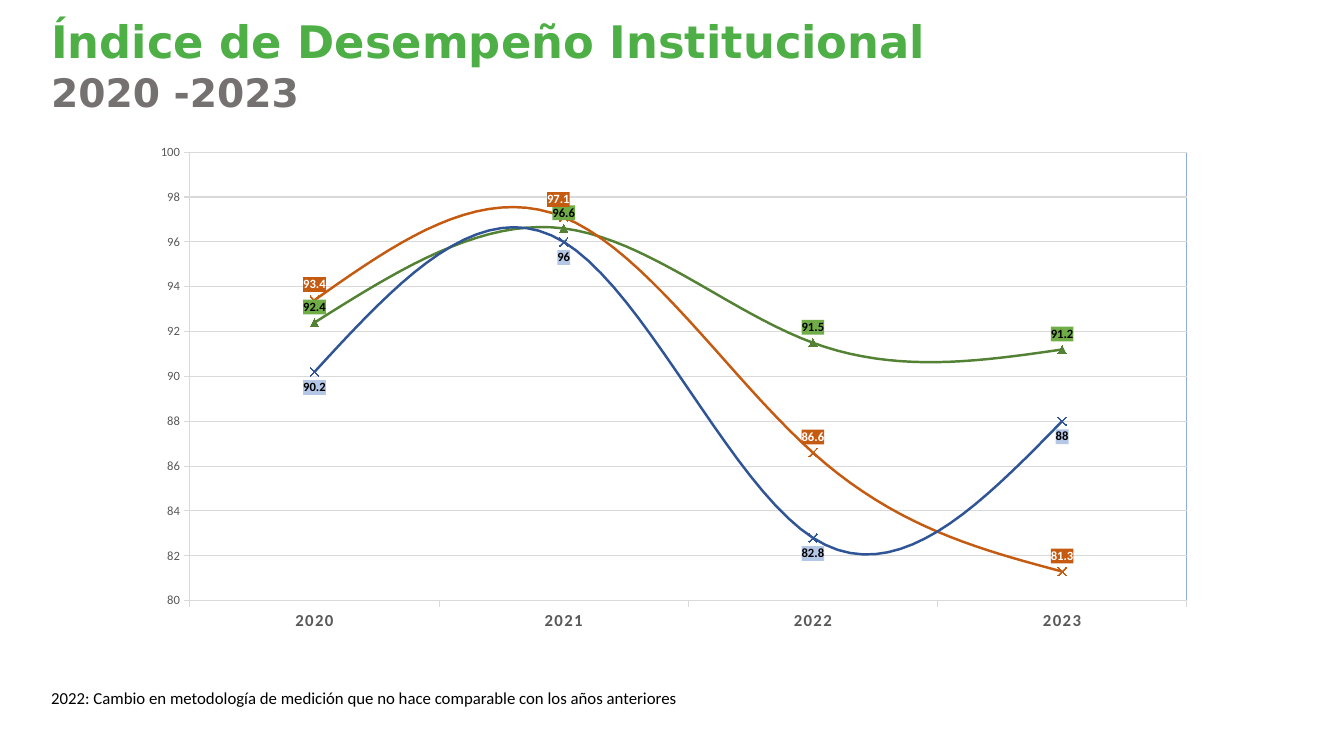
import pptx
import pptx.chart.data
import pptx.dml.color
import pptx.enum.chart
import pptx.enum.text
import pptx.oxml
import pptx.oxml.ns
import pptx.util

Cm = pptx.util.Cm
Pt = pptx.util.Pt
XL = pptx.enum.chart
NAMESPACES = pptx.oxml.ns.nsdecls("c", "a")

COLORS = {
    "title": "4DAF46", "period": "767171", "black": "000000", "white": "FFFFFF",
    "axis_text": "595959", "grid": "D9D9D9", "axis": "A6A6A6", "frame": "8FAADC",
    "green": "548235", "orange": "C55A11", "blue": "2F5597",
    "green_label": "70AD47", "blue_label": "B4C7E7",
}


def set_font(font, size, color, bold=False, name="Calibri"):
    font.name = name
    font.size = Pt(size)
    font.bold = bold
    font.color.rgb = pptx.dml.color.RGBColor.from_string(COLORS[color])


def chart_xml(tag, content):
    return pptx.oxml.parse_xml(f"<c:{tag} {NAMESPACES}>{content}</c:{tag}>")


deck = pptx.Presentation()
deck.slide_width = Cm(33.87)
deck.slide_height = Cm(19.05)
page = deck.slides.add_slide(deck.slide_layouts[6])

title_box = page.shapes.add_textbox(Cm(1.04), Cm(0.23), Cm(27.2), Cm(2.82))
title_box.text_frame.word_wrap = True
title_box.text_frame.text = "Índice de Desempeño Institucional\n2020 -2023"
for para, size, color in zip(title_box.text_frame.paragraphs, (32, 28), ("title", "period")):
    set_font(para.font, size, color, True, "DejaVu Sans")

series_rows = [
    ("Entidad A", (92.4, 96.6, 91.5, 91.2), "green", "TRIANGLE", "ABOVE", "green_label", "black"),
    ("Entidad B", (93.4, 97.1, 86.6, 81.3), "orange", "X", "ABOVE", "orange", "white"),
    ("Entidad C", (90.2, 96, 82.8, 88), "blue", "X", "BELOW", "blue_label", "black"),
]
data = pptx.chart.data.CategoryChartData()
data.categories = ["2020", "2021", "2022", "2023"]
for name, values, *style in series_rows:
    data.add_series(name, values)
chart = page.shapes.add_chart(
    XL.XL_CHART_TYPE.LINE_MARKERS, Cm(2.72), Cm(3.28), Cm(27.2), Cm(13.87), data
).chart
chart.has_title = False
chart.has_legend = False
set_font(chart.font, 10, "black")

for axis, size, bold in ((chart.category_axis, 12, True), (chart.value_axis, 9, False)):
    set_font(axis.tick_labels.font, size, "axis_text", bold)
    axis.major_tick_mark = XL.XL_TICK_MARK.OUTSIDE
    axis.minor_tick_mark = XL.XL_TICK_MARK.NONE
    axis.format.line.color.rgb = pptx.dml.color.RGBColor.from_string(COLORS["grid"])
    axis.format.line.width = Pt(0.75)
category_text = chart.category_axis._element.find(".//" + pptx.oxml.ns.qn("a:defRPr"))
category_text.set("spc", "100")

scale = chart.value_axis
scale.minimum_scale, scale.maximum_scale, scale.major_unit = 80, 100, 2
scale.has_major_gridlines = True
grid_line = scale.major_gridlines.format.line
grid_line.color.rgb = pptx.dml.color.RGBColor.from_string(COLORS["grid"])
grid_line.width = Pt(0.75)

plot_area = chart._chartSpace.chart.plotArea
for layout in plot_area.findall(pptx.oxml.ns.qn("c:layout")):
    plot_area.remove(layout)
plot_area.insert(0, chart_xml("layout", (
    '<c:manualLayout><c:layoutTarget val="inner"/><c:xMode val="edge"/><c:yMode val="edge"/>'
    '<c:x val="0.076"/><c:y val="0.04"/><c:w val="0.924"/><c:h val="0.815"/></c:manualLayout>'
)))
plot_area.append(chart_xml("spPr", (
    f'<a:noFill/><a:ln w="9525"><a:solidFill><a:srgbClr val="{COLORS["frame"]}"/></a:solidFill></a:ln>'
)))

for series, row in zip(chart.plots[0].series, series_rows):
    name, values, color, marker, position, label_fill, label_color = row
    paint = pptx.dml.color.RGBColor.from_string(COLORS[color])
    series.smooth = True
    series.format.line.color.rgb = paint
    series.format.line.width = Pt(1.75)
    series.marker.style = XL.XL_MARKER_STYLE[marker]
    series.marker.size = 6
    series.marker.format.fill.solid()
    series.marker.format.fill.fore_color.rgb = paint
    series.marker.format.line.color.rgb = paint

    labels = series.data_labels
    labels.show_value = True
    targets = [labels]
    if color == "orange":
        targets.append(series.points[1].data_label)
    for target in targets:
        set_font(target.font, 9, label_color, True)
        target.position = XL.XL_LABEL_POSITION[position]
    for text in labels._element.iter(pptx.oxml.ns.qn("c:txPr")):
        text.addprevious(chart_xml(
            "spPr", f'<a:solidFill><a:srgbClr val="{COLORS[label_fill]}"/></a:solidFill>'
        ))
    for point_label in labels._element.findall(pptx.oxml.ns.qn("c:dLbl")):
        point_label.insert(1, chart_xml("layout", (
            '<c:manualLayout><c:x val="-0.005"/><c:y val="-0.004"/></c:manualLayout>'
        )))

note_box = page.shapes.add_textbox(Cm(1.04), Cm(17.2), Cm(16.48), Cm(0.76))
note_box.text_frame.word_wrap = False
note_box.text_frame.text = (
    "2022: Cambio en metodología de medición que no hace comparable con los años anteriores"
)
set_font(note_box.text_frame.paragraphs[0].font, 12, "black")

deck.save("out.pptx")
